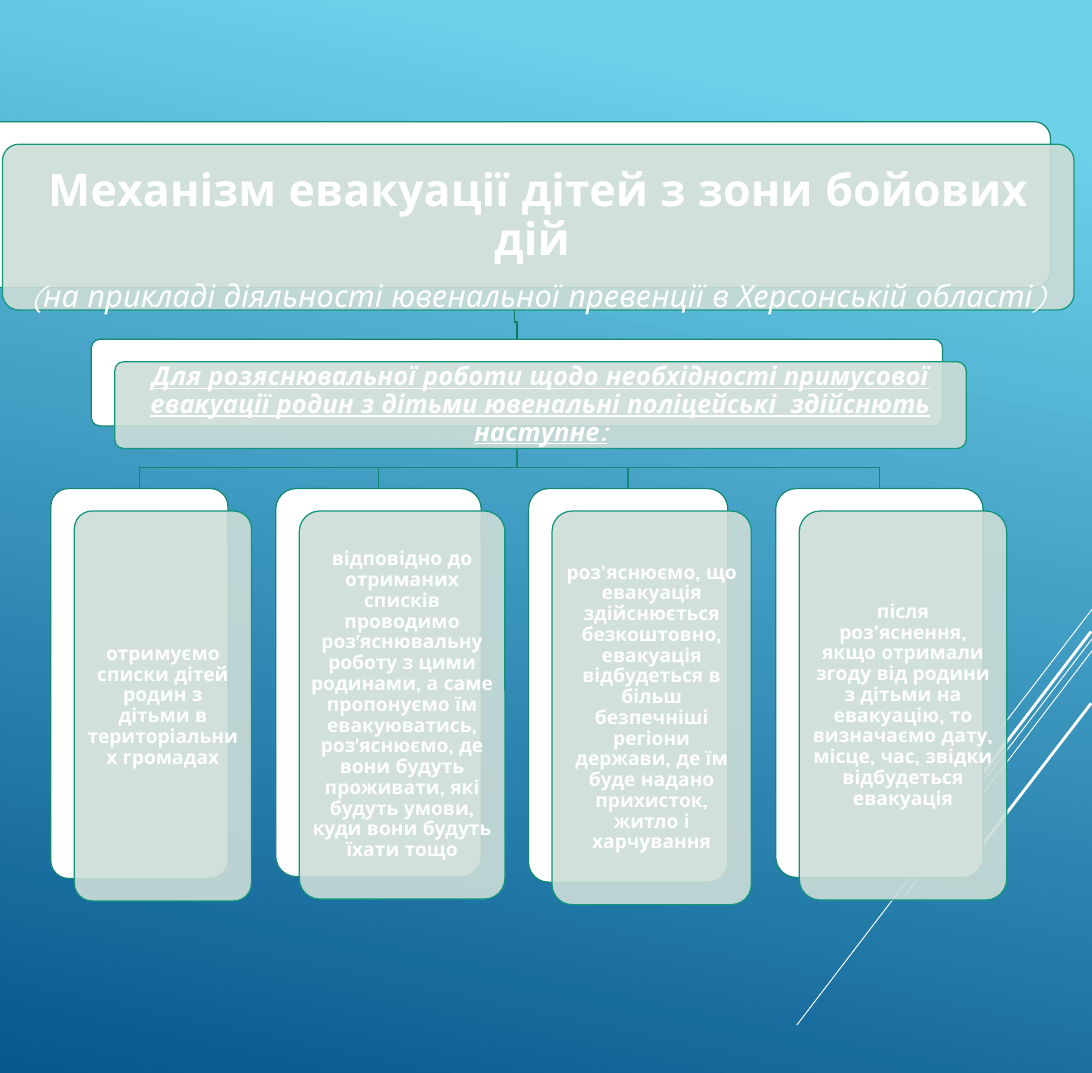
from collections import namedtuple

from lxml import etree
from pptx import Presentation
from pptx import util as u
from pptx.dml.color import RGBColor
from pptx.enum import shapes, text
from pptx.oxml.ns import qn

WIDTH, HEIGHT = u.Cm(30.08), u.Cm(29.56)
FONT, WHITE, PANEL = "Quicksand", "FFFFFF", "CCDDD7"
EDGE, PANEL_EDGE, TITLE_EDGE = "128871", "14967C", "107863"
SHIFT_X, SHIFT_Y = 2.16, 2.1
CARDS_TOP = 45.53
INSET = 0.06

Box = namedtuple("Box", "left top width height")
Line = namedtuple("Line", "text size bold italic underline", defaults=(True, False, False))

TITLE_BOX = Box(-1.94, 11.34, 98.14, 15.46)
TITLE = [
    Line("Механізм евакуації дітей з зони бойових дій ", 35),
    Line("(на прикладі діяльності ювенальної превенції в Херсонській області)", 24, False, True),
]
TASK_BOX = Box(8.36, 31.62, 77.96, 8.08)
TASK = [Line("Для розяснювальної роботи щодо необхідності примусової евакуації родин "
             "з дітьми ювенальні поліцейські  здійснють наступне:", 20, True, True, True)]
STEPS = [
    (Box(4.65, CARDS_TOP, 16.22, 36.34),
     "отримуємо списки дітей родин з дітьми в територіальних громадах"),
    (Box(25.25, CARDS_TOP, 18.83, 36.17),
     "відповідно до отриманих списків проводимо роз'яснювальну роботу з цими родинами, "
     "а саме пропонуємо їм евакуюватись, роз'яснюємо, де вони будуть проживати, "
     "які будуть умови, куди вони будуть їхати тощо"),
    (Box(48.4, CARDS_TOP, 18.24, 36.68),
     "роз’яснюємо, що евакуація здійснюється безкоштовно, евакуація відбудеться в більш "
     "безпечніші регіони держави, де їм буде надано прихисток, житло і харчування"),
    (Box(71.03, CARDS_TOP, 19, 36.25),
     "після роз’яснення, якщо отримали згоду від родини з дітьми на евакуацію, "
     "то визначаємо дату, місце, час, звідки відбудеться евакуація"),
]
RAYS = [
    (100, 56.79, 91.72, 67.78, 0.75),
    (100, 59.54, 72.97, 95.53, 0.75),
    (100, 60.65, 82.77, 83.59, 0.75),
    (99.92, 58.85, 84.12, 79.9, 2.25),
    (99.92, 65.55, 88.43, 80.76, 2.25),
]


def across(share):
    """Turn a percentage of the slide width into a length."""
    return u.Emu(round(WIDTH * share / 100))


def down(share):
    """Turn a percentage of the slide height into a length."""
    return u.Emu(round(HEIGHT * share / 100))


def paint(color_format, color):
    """Apply a hex colour."""
    color_format.rgb = RGBColor.from_string(color)


def outline(shape, color, width=1):
    """Give a shape or connector a solid line."""
    paint(shape.line.color, color)
    shape.line.width = u.Pt(width)


def draw_background(slide):
    """Fill the slide with the blue gradient."""
    fill = slide.background.fill
    fill.gradient()
    fill.gradient_angle = 258
    for stop, color, position in zip(fill.gradient_stops, ("6ED2EB", "06588E"), (0.1, 1)):
        paint(stop.color, color)
        stop.position = position


def draw_rays(slide):
    """Draw the slanted white lines at the right edge."""
    for x1, y1, x2, y2, width in RAYS:
        ray = slide.shapes.add_connector(
            shapes.MSO_CONNECTOR.STRAIGHT, across(x1), down(y1), across(x2), down(y2))
        outline(ray, WHITE, width)
        etree.SubElement(ray._element.spPr, qn("a:effectLst"))


def draw_branch(slide, parent, child, color):
    """Draw an elbow from the foot of one box to the top of another."""
    start_x = across(parent.left + parent.width / 2)
    end_x = across(child.left + child.width / 2)
    foot = parent.top + parent.height
    bend = down(foot + (child.top - foot) * 2 / 3)
    builder = slide.shapes.build_freeform(start_x, down(foot))
    builder.add_line_segments(
        [(start_x, bend), (end_x, bend), (end_x, down(child.top))], close=False)
    branch = builder.convert_to_shape()
    branch.shadow.inherit = False
    branch.fill.background()
    outline(branch, color)


def draw_plate(slide, box, fill, edge):
    """Draw one rounded rectangle."""
    plate = slide.shapes.add_shape(
        shapes.MSO_SHAPE.ROUNDED_RECTANGLE,
        across(box.left), down(box.top), across(box.width), down(box.height))
    plate.adjustments[0] = 0.1
    plate.shadow.inherit = False
    plate.fill.solid()
    paint(plate.fill.fore_color, fill)
    outline(plate, edge)
    return plate


def draw_card(slide, box, lines, top_inset=INSET):
    """Draw a white plate with a translucent text panel shifted over it."""
    draw_plate(slide, box, WHITE, EDGE)
    front = box._replace(left=box.left + SHIFT_X, top=box.top + SHIFT_Y)
    panel = draw_plate(slide, front, PANEL, PANEL_EDGE)
    color = panel._element.spPr.find(qn("a:solidFill"))[0]
    etree.SubElement(color, qn("a:alpha"), val="90000")

    frame = panel.text_frame
    frame.word_wrap = True
    frame.vertical_anchor = text.MSO_ANCHOR.MIDDLE
    frame.margin_left = frame.margin_right = frame.margin_bottom = u.Inches(INSET)
    frame.margin_top = u.Inches(top_inset)
    for index, line in enumerate(lines):
        paragraph = frame.add_paragraph() if index else frame.paragraphs[0]
        paragraph.text = line.text
        paragraph.alignment = text.PP_ALIGN.CENTER
        paragraph.line_spacing = 0.9
        paragraph.space_after = u.Pt(line.size * 0.35)
        font = paragraph.font
        font.name, font.size = FONT, u.Pt(line.size)
        font.bold, font.italic, font.underline = line.bold, line.italic, line.underline
        paint(font.color, WHITE)


def draw_hierarchy(slide):
    """Draw the title, the task and its four steps with their branches."""
    for box, _ in reversed(STEPS):
        draw_branch(slide, TASK_BOX, box, EDGE)
    draw_branch(slide, TITLE_BOX, TASK_BOX, TITLE_EDGE)
    draw_card(slide, TITLE_BOX, TITLE, top_inset=0.36)
    draw_card(slide, TASK_BOX, TASK)
    for box, step in STEPS:
        draw_card(slide, box, [Line(step, 15)])


def main():
    """Build and save the presentation."""
    presentation = Presentation()
    presentation.slide_width, presentation.slide_height = WIDTH, HEIGHT
    slide = presentation.slides.add_slide(presentation.slide_layouts[6])
    draw_background(slide)
    draw_rays(slide)
    draw_hierarchy(slide)
    presentation.save("out.pptx")


if __name__ == "__main__":
    main()
